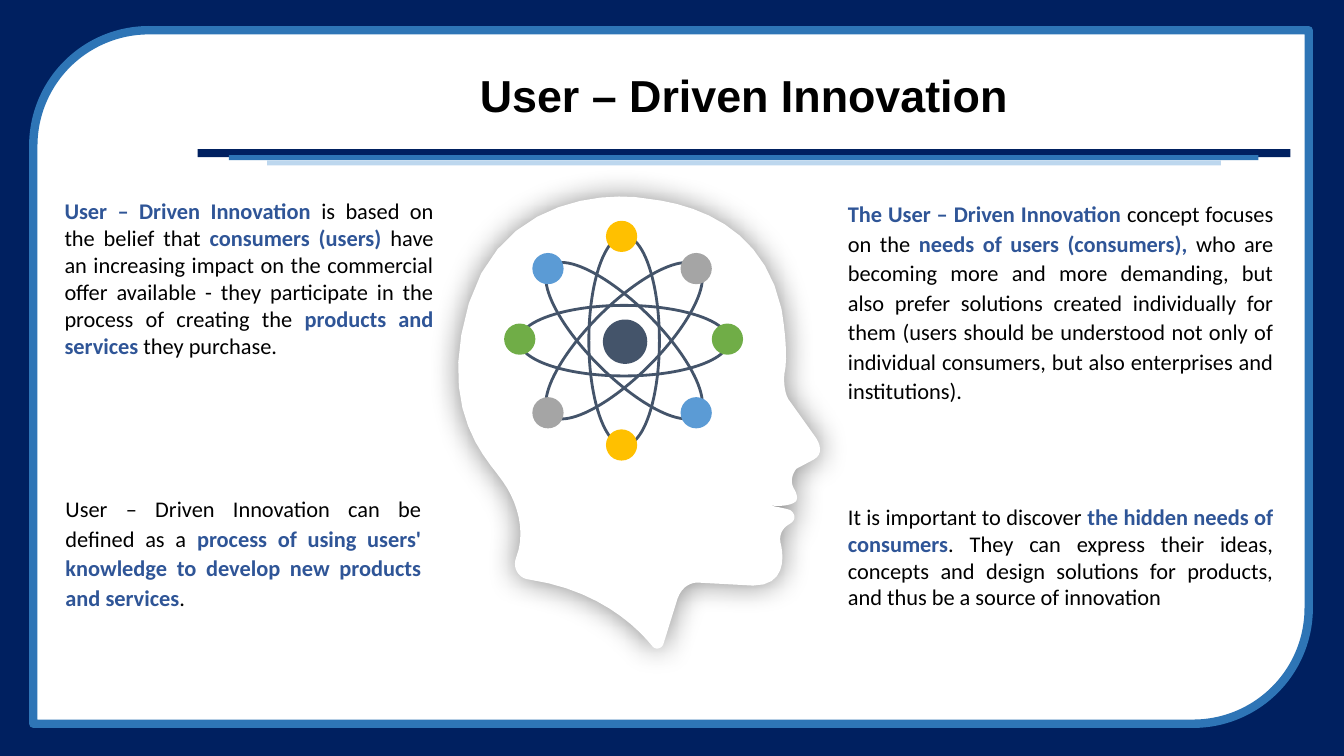
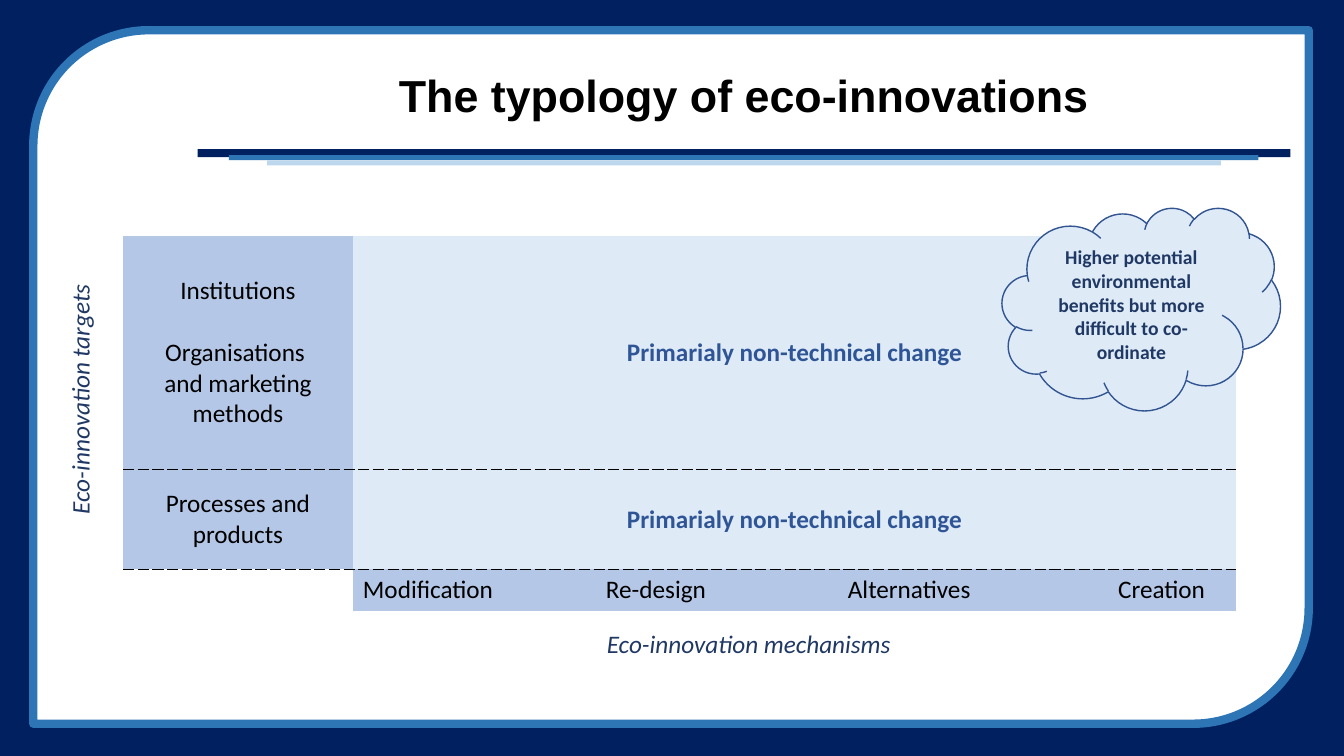
"""Build two innovation slides: a user-driven concept and an eco-innovation table."""
from dataclasses import dataclass
from typing import NamedTuple

from lxml import etree
from pptx import Presentation
from pptx.dml.color import RGBColor
from pptx.enum.shapes import MSO_SHAPE
from pptx.enum.text import MSO_ANCHOR, MSO_AUTO_SIZE, PP_ALIGN
from pptx.oxml.ns import qn
from pptx.util import Emu, Pt

NAVY = RGBColor(0x00, 0x20, 0x60)
BLUE = RGBColor(0x2E, 0x75, 0xB6)
PALE_BLUE = RGBColor(0xBD, 0xD7, 0xEE)
ACCENT = RGBColor(0x2F, 0x55, 0x97)
DARK_BLUE = RGBColor(0x20, 0x38, 0x64)
CELL_HEAD = RGBColor(0xB4, 0xC7, 0xE7)
CELL_BODY = RGBColor(0xDE, 0xEB, 0xF7)
CLOUD_LINE = RGBColor(0x32, 0x54, 0x91)
SLATE = RGBColor(0x44, 0x54, 0x6A)
GOLD = RGBColor(0xFF, 0xC0, 0x00)
GREEN = RGBColor(0x70, 0xAD, 0x47)
GREY = RGBColor(0xA5, 0xA5, 0xA5)
SKY = RGBColor(0x5B, 0x9B, 0xD5)
WHITE = RGBColor(0xFF, 0xFF, 0xFF)
BLACK = RGBColor(0x00, 0x00, 0x00)

RECT = MSO_SHAPE.RECTANGLE
OVAL = MSO_SHAPE.OVAL
CLOUD = MSO_SHAPE.CLOUD
DIAGONAL = MSO_SHAPE.ROUND_2_DIAG_RECTANGLE
CENTER = PP_ALIGN.CENTER
JUSTIFY = PP_ALIGN.JUSTIFY
LEFT = PP_ALIGN.LEFT
MIDDLE = MSO_ANCHOR.MIDDLE
FIT_SHAPE = MSO_AUTO_SIZE.SHAPE_TO_FIT_TEXT
NO_FIT = MSO_AUTO_SIZE.NONE

EMU_PER_PX = 9144
TITLE_ONLY = 5
NO_STYLE = "{2D5ABB26-0587-4C30-8999-92F81FD0307C}"


class Box(NamedTuple):
    """Left, top, width and height in px."""
    x: int
    y: int
    w: int
    h: int


@dataclass(frozen=True)
class Note:
    """A justified text of (wording, highlighted) runs."""
    box: Box
    runs: tuple[tuple[str, bool], ...]
    spacing: float | None = None


class Dot(NamedTuple):
    """An electron on the atom."""
    x: int
    y: int
    color: RGBColor


@dataclass(frozen=True)
class Label:
    """An italic axis label."""
    text: str
    box: Box
    rotation: int = 0


BARS = (
    (Box(196, 148, 1084, 8), NAVY),
    (Box(227, 154, 1021, 5), BLUE),
    (Box(265, 159, 946, 5), PALE_BLUE),
)

NOTES = (
    Note(Box(64, 191, 366, 172), (
        ("User – Driven Innovation ", True),
        ("is based on the belief that ", False),
        ("consumers (users) ", True),
        ("have an increasing impact on the commercial offer available - they "
         "participate in the process of creating the ", False),
        ("products and services ", True),
        ("they purchase.", False))),
    Note(Box(65, 484, 353, 129), (
        ("User – Driven Innovation can be defined as a ", False),
        ("process of using users' knowledge to develop new products and services", True),
        (".", False)), 1.1),
    Note(Box(841, 191, 422, 217), (
        ("The User – Driven Innovation ", True),
        ("concept focuses on the ", False),
        ("needs of users (consumers), ", True),
        ("who are becoming more and more demanding, but also prefer solutions "
         "created individually for them (users should be understood not only of "
         "individual consumers, but also enterprises and institutions).", False)), 1.1),
    Note(Box(841, 494, 422, 118), (
        ("It is important to discover ", False),
        ("the hidden needs of consumers", True),
        (". They can express their ideas, concepts and design solutions for "
         "products, and thus be a source of innovation", False))),
)

HEAD_START = (809, 434)
HEAD = (
    (784, 399), (776, 390, 778, 371, 778, 371), (783, 350, 775, 306, 775, 306),
    (757, 224, 688, 202, 641, 197), (610, 191, 499, 191, 465, 301),
    (432, 411, 485, 457, 499, 478), (513, 498, 522, 527, 512, 553),
    (508, 563, 514, 574, 525, 575), (592, 585, 630, 620, 647, 641),
    (650, 645, 656, 644, 658, 639), (672, 594), (678, 577, 692, 578, 692, 578),
    (747, 581), (787, 581, 774, 538, 774, 538), (772, 525, 783, 520, 783, 520),
    (793, 514, 785, 507, 785, 507), (785, 505, 760, 501, 760, 501),
    (779, 504, 787, 499, 787, 499), (795, 496, 787, 484, 787, 484),
    (782, 474, 790, 465, 790, 465), (807, 456), (820, 449, 809, 434, 809, 434),
)

ORBIT = Box(515, 303, 208, 70)
ORBIT_ANGLES = (0, 45, 90, 135)
NUCLEUS = Box(598, 317, 44, 44)
DOT_SIZE = 31
DOTS = (
    Dot(601, 219, GOLD), Dot(601, 426, GOLD), Dot(706, 321, GREEN), Dot(500, 321, GREEN),
    Dot(675, 251, GREY), Dot(528, 394, GREY), Dot(675, 394, SKY), Dot(528, 251, SKY),
)

COLUMNS = (228, 876)
ROWS = (232, 99, 41)
CHANGE = "Primarialy non-technical change"
TARGETS = ("Institutions\nOrganisations \nand marketing methods", "Processes and products")
MECHANISMS = ("Modification", "Re-design", "Alternatives", "Creation")
MECHANISM_TABS = (241, 481, 749)
LABELS = (
    Label("Eco-innovation mechanisms", Box(592, 618, 341, 40)),
    Label("Eco-innovation targets", Box(-45, 376, 248, 40), 270),
)


def px(n: float) -> Emu:
    """Turn px into EMU."""
    return Emu(round(n * EMU_PER_PX))


def place(box: Box) -> tuple[Emu, ...]:
    """Turn a box into EMU lengths."""
    return tuple(px(n) for n in box)


def style(tf, size: int, color: RGBColor, align, *, font="Calibri", bold=False, italic=False):
    """Format every paragraph and run of a text frame."""
    for p in tf.paragraphs:
        p.alignment = align
        for r in p.runs:
            r.font.name, r.font.size = font, Pt(size)
            r.font.bold, r.font.italic = bold, italic
            r.font.color.rgb = color


def add_shape(s, kind, box: Box, fill: RGBColor | None, line: RGBColor | None = None,
              width: int = 1):
    """Add a preset shape without shadow."""
    sp = s.shapes.add_shape(kind, *place(box))
    sp.shadow.inherit = False
    if fill is None:
        sp.fill.background()
    else:
        sp.fill.solid()
        sp.fill.fore_color.rgb = fill
    if line is None:
        sp.line.fill.background()
    else:
        sp.line.color.rgb, sp.line.width = line, Pt(width)
    return sp


def prepare_layout(s, layout):
    """Put the frame, the title rule and the title position on the layout."""
    for ph in list(layout.placeholders):
        if ph.placeholder_format.idx:
            ph.element.getparent().remove(ph.element)
        else:
            ph.left, ph.top, ph.width, ph.height = place(Box(196, 49, 1084, 97))
    parts = [add_shape(s, RECT, Box(0, 0, 1333, 750), NAVY),
             add_shape(s, DIAGONAL, Box(33, 30, 1265, 688), WHITE, BLUE, 6)]
    parts += [add_shape(s, RECT, box, color) for box, color in BARS]
    for i, sp in enumerate(parts, 2):
        layout.shapes.element.insert(i, sp.element)


def set_title(s, text: str):
    """Fill and format the title placeholder."""
    tf = s.shapes.title.text_frame
    tf.text = text
    tf.auto_size, tf.vertical_anchor = NO_FIT, MIDDLE
    tf.paragraphs[0].line_spacing = 0.9
    style(tf, 32, BLACK, CENTER, font="Arial", bold=True)


def add_textbox(s, box: Box):
    """Add a wrapping text box that grows with its text."""
    sp = s.shapes.add_textbox(*place(box))
    sp.text_frame.word_wrap, sp.text_frame.auto_size = True, FIT_SHAPE
    return sp


def add_note(s, note: Note):
    """Add a justified text with highlighted runs."""
    tf = add_textbox(s, note.box).text_frame
    tf.margin_left = tf.margin_right = 0
    p = tf.paragraphs[0]
    p.line_spacing = note.spacing
    for text, _ in note.runs:
        p.add_run().text = text
    style(tf, 16, BLACK, JUSTIFY)
    for r, (_, strong) in zip(p.runs, note.runs):
        if strong:
            r.font.bold, r.font.color.rgb = True, ACCENT


def outline(start: tuple, segments: tuple, steps: int = 10) -> list[tuple[Emu, Emu]]:
    """Flatten lines and cubic curves into points."""
    points, (x0, y0) = [], start
    for seg in segments:
        *controls, x3, y3 = seg
        if controls:
            x1, y1, x2, y2 = controls
            for i in range(1, steps):
                t = i / steps
                a, b, c, d = (1 - t) ** 3, 3 * t * (1 - t) ** 2, 3 * t * t * (1 - t), t ** 3
                points.append((px(a * x0 + b * x1 + c * x2 + d * x3),
                               px(a * y0 + b * y1 + c * y2 + d * y3)))
        points.append((px(x3), px(y3)))
        x0, y0 = x3, y3
    return points


def add_head(s):
    """Draw the head silhouette with a soft glow of shadow."""
    builder = s.shapes.build_freeform(*(px(n) for n in HEAD_START))
    builder.add_line_segments(outline(HEAD_START, HEAD), close=True)
    sp = builder.convert_to_shape()
    sp.fill.solid()
    sp.fill.fore_color.rgb = WHITE
    sp.line.fill.background()
    sp.shadow.inherit = False
    effects = sp.element.spPr.find(qn("a:effectLst"))
    shadow = etree.SubElement(effects, qn("a:outerShdw"), blurRad=str(Pt(21)), dist="0",
                              algn="ctr", rotWithShape="0")
    color = etree.SubElement(shadow, qn("a:srgbClr"), val=str(BLACK))
    etree.SubElement(color, qn("a:alpha"), val="45000")


def add_atom(s):
    """Draw the nucleus, the orbits and the electrons."""
    add_shape(s, OVAL, NUCLEUS, SLATE)
    for angle in ORBIT_ANGLES:
        add_shape(s, OVAL, ORBIT, None, SLATE, 2).rotation = angle
    for dot in DOTS:
        add_shape(s, OVAL, Box(dot.x, dot.y, DOT_SIZE, DOT_SIZE), dot.color)


def dash_border(cell, side: str):
    """Give one side of a cell a dashed black border."""
    ln = etree.Element(qn(f"a:{side}"), w=str(Pt(1)))
    fill = etree.SubElement(ln, qn("a:solidFill"))
    etree.SubElement(fill, qn("a:srgbClr"), val=str(BLACK))
    etree.SubElement(ln, qn("a:prstDash"), val="dash")
    cell._tc.get_or_add_tcPr().insert(0, ln)


def fill_cell(cell, text: str, fill: RGBColor, color: RGBColor, align, bold: bool = False):
    """Write and format a table cell."""
    cell.text_frame.text = text
    cell.vertical_anchor = MIDDLE
    cell.fill.solid()
    cell.fill.fore_color.rgb = fill
    style(cell.text_frame, 18, color, align, bold=bold)


def add_typology(s):
    """Add the table of targets against mechanisms."""
    box = Box(122, 234, sum(COLUMNS), sum(ROWS))
    frame = s.shapes.add_table(len(ROWS), len(COLUMNS), *place(box))
    frame.element.find(".//" + qn("a:tableStyleId")).text = NO_STYLE
    table = frame.table
    table.first_row = table.horz_banding = False
    for column, width in zip(table.columns, COLUMNS):
        column.width = px(width)
    for row, height in zip(table.rows, ROWS):
        row.height = px(height)
    for i, (target, side) in enumerate(zip(TARGETS, ("lnB", "lnT"))):
        fill_cell(table.cell(i, 0), target, CELL_HEAD, BLACK, CENTER)
        fill_cell(table.cell(i, 1), CHANGE, CELL_BODY, ACCENT, CENTER, True)
        for j in range(len(COLUMNS)):
            dash_border(table.cell(i, j), side)
    table.cell(0, 0).text_frame.paragraphs[1].space_before = Pt(22)
    table.cell(2, 0).fill.background()
    cell = table.cell(2, 1)
    fill_cell(cell, "\t".join(MECHANISMS), CELL_HEAD, BLACK, LEFT)
    tabs = etree.SubElement(cell.text_frame.paragraphs[0]._p.get_or_add_pPr(), qn("a:tabLst"))
    for pos in MECHANISM_TABS:
        etree.SubElement(tabs, qn("a:tab"), pos=str(px(pos)), algn="l")


def add_label(s, label: Label):
    """Add an axis label."""
    sp = add_textbox(s, label.box)
    sp.rotation = label.rotation
    sp.text_frame.text = label.text
    style(sp.text_frame, 18, DARK_BLUE, LEFT, italic=True)


def main():
    """Build and save the presentation."""
    prs = Presentation()
    prs.slide_width, prs.slide_height = px(1333), px(750)
    layout = prs.slide_layouts[TITLE_ONLY]

    s = prs.slides.add_slide(layout)
    prepare_layout(s, layout)
    set_title(s, "User – Driven Innovation")
    add_head(s)
    add_atom(s)
    for note in NOTES:
        add_note(s, note)

    s = prs.slides.add_slide(layout)
    set_title(s, "The typology of eco-innovations")
    add_typology(s)
    for label in LABELS:
        add_label(s, label)
    tf = add_shape(s, CLOUD, Box(994, 206, 276, 201), CELL_BODY, CLOUD_LINE).text_frame
    tf.text = "Higher potential environmental benefits but more difficult to co-ordinate"
    tf.word_wrap, tf.vertical_anchor = True, MIDDLE
    style(tf, 14, DARK_BLUE, CENTER, bold=True)
    prs.save("out.pptx")


if __name__ == "__main__":
    main()
